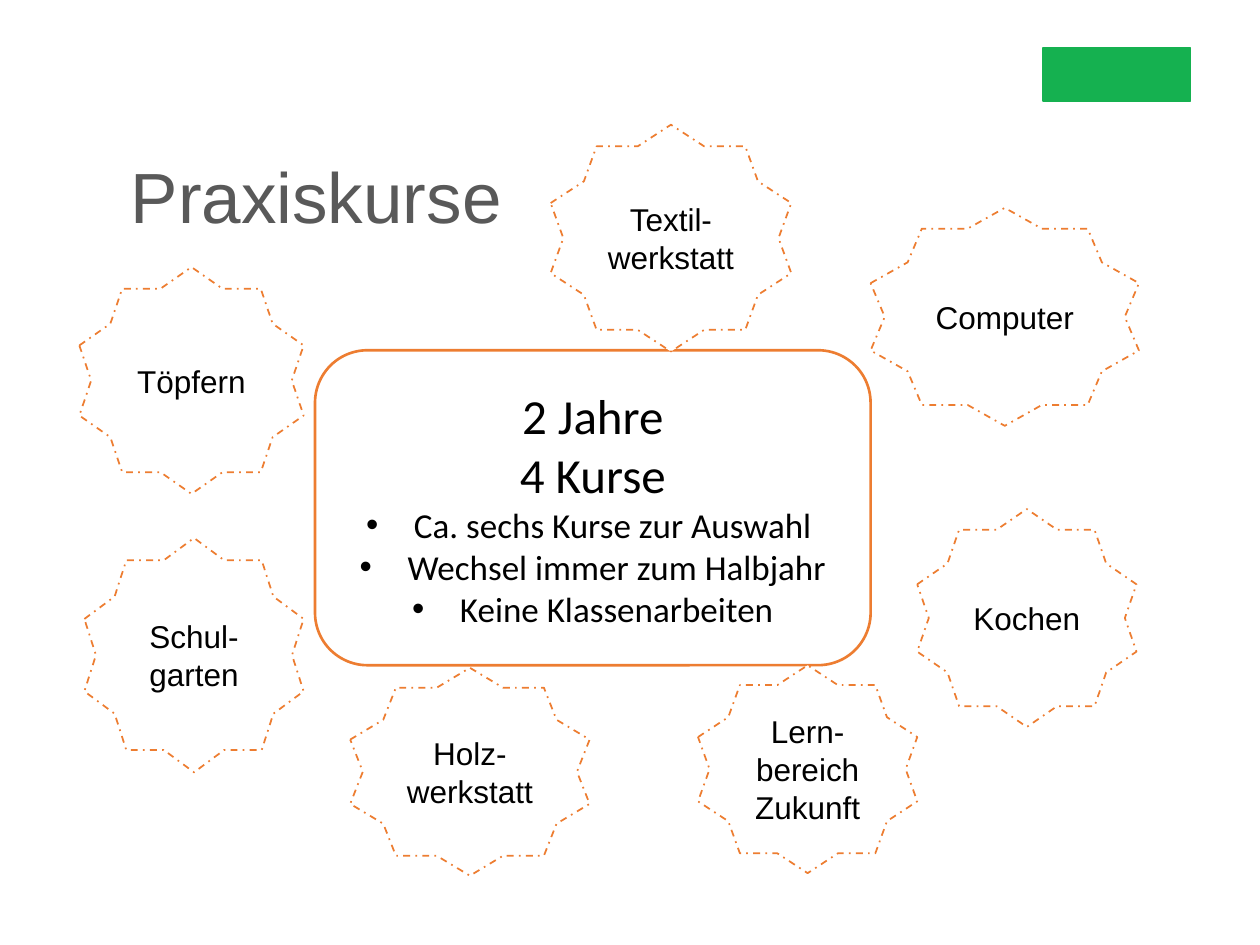
from lxml import etree
from pptx import Presentation
from pptx.dml.color import RGBColor
from pptx.enum.dml import MSO_LINE
from pptx.enum.shapes import MSO_SHAPE as Shape
from pptx.enum.text import MSO_ANCHOR as Anchor, PP_ALIGN as Align
from pptx.oxml.ns import qn
from pptx.util import Inches, Pt

COLORS = {"green": "15B150", "orange": "ED7D31", "white": "FFFFFF",
          "black": "000000", "gray": "595959"}


def add_outlined(page, kind, place, fill, line, width=1, dash=None):
    shape = page.shapes.add_shape(kind, *[Inches(value) for value in place])
    shape.shadow.inherit = False
    shape.fill.solid()
    shape.fill.fore_color.rgb = RGBColor.from_string(COLORS[fill])
    shape.line.color.rgb = RGBColor.from_string(COLORS[line])
    shape.line.width = Pt(width)
    if dash:
        shape.line.dash_style = dash
    return shape


def write(box, text, size=18, font="Arial", color="black", align=Align.CENTER,
          anchor=Anchor.MIDDLE, spacing=None, bullet=False, first=True):
    frame = box.text_frame
    frame.word_wrap = True
    frame.vertical_anchor = anchor
    para = frame.paragraphs[0] if first else frame.add_paragraph()
    para.alignment = align
    if spacing:
        para.line_spacing = spacing
    if bullet:
        props = para._p.get_or_add_pPr()
        props.set("marL", str(Inches(0.38)))
        props.set("indent", str(Inches(-0.38)))
        etree.SubElement(props, qn("a:buFont")).set("typeface", "Arial")
        etree.SubElement(props, qn("a:buChar")).set("char", "•")
    span = para.add_run()
    span.text = text
    span.font.size = Pt(size)
    span.font.name = font
    span.font.color.rgb = RGBColor.from_string(COLORS[color])


deck = Presentation()
deck.slide_width, deck.slide_height = Inches(10), Inches(7.5)
page = deck.slides.add_slide(deck.slide_layouts[6])

# Green corner block
add_outlined(page, Shape.RECTANGLE, (8.28, 0.38, 1.17, 0.42), "green", "green")

# Title
title = page.shapes.add_textbox(Inches(0.94), Inches(1.24), Inches(8.52), Inches(1))
write(title, "Praxiskurse", size=40.6, color="gray", align=Align.LEFT,
      anchor=Anchor.TOP, spacing=0.9)

# Central summary
summary = add_outlined(page, Shape.ROUNDED_RECTANGLE, (2.5, 2.78, 4.41, 2.5),
                       "white", "orange", width=1.5)
write(summary, "2 Jahre", size=28, font="Calibri")
write(summary, "4 Kurse", size=28, font="Calibri", first=False)
for point in ("Ca. sechs Kurse zur Auswahl ", "Wechsel immer zum Halbjahr",
              "Keine Klassenarbeiten"):
    write(summary, point, size=20, font="Calibri", bullet=True, first=False)

# Course stars around the summary
courses = [
    ("Töpfern", (0.63, 2.12, 1.78, 1.8)),
    ("Textil-werkstatt", (4.37, 0.99, 1.91, 1.8)),
    ("Computer", (6.91, 1.65, 2.13, 1.73)),
    ("Kochen", (7.28, 4.04, 1.74, 1.73)),
    ("Lern-bereich Zukunft", (5.54, 5.28, 1.74, 1.65)),
    ("Holz-werkstatt", (2.78, 5.3, 1.9, 1.65)),
    ("Schul-garten", (0.67, 4.27, 1.74, 1.86)),
]
for course, place in courses:
    star = add_outlined(page, Shape.STAR_10_POINT, place, "white", "orange",
                        dash=MSO_LINE.DASH_DOT)
    write(star, course)

deck.save("out.pptx")
